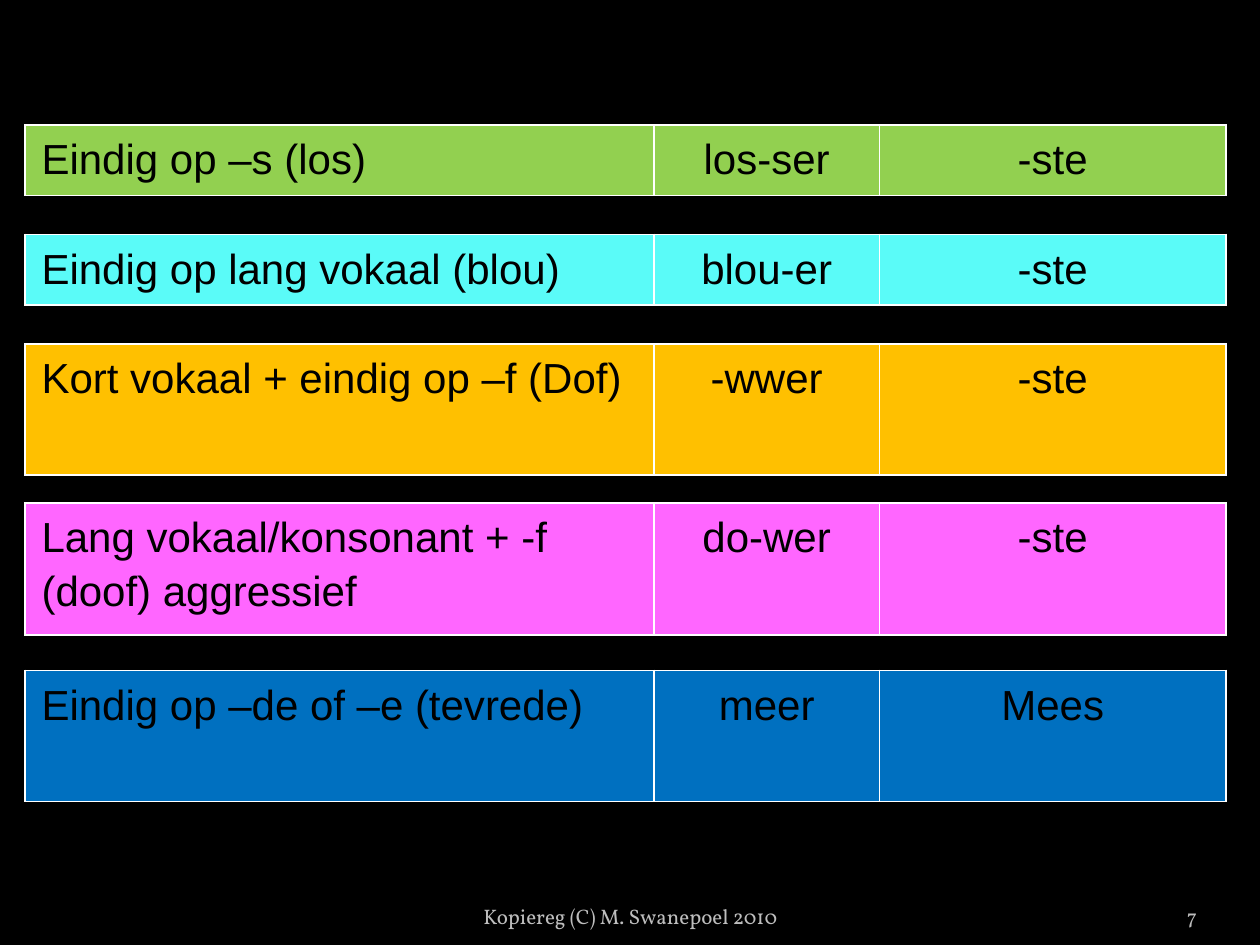
"""Build a slide of Afrikaans degrees-of-comparison spelling rules."""
from dataclasses import dataclass

from lxml.etree import fromstring
from pptx import Presentation
from pptx.dml.color import RGBColor
from pptx.enum.text import MSO_ANCHOR as ANCHOR, PP_ALIGN as ALIGN
from pptx.oxml.ns import nsdecls
from pptx.slide import Slide
from pptx.table import _Cell as Cell
from pptx.util import Inches, Pt

BLACK = RGBColor(0x00, 0x00, 0x00)
GREY = RGBColor(0xBD, 0xBD, 0xBD)
GREEN = RGBColor(0x92, 0xD0, 0x50)
CYAN = RGBColor(0x5A, 0xFB, 0xF8)
AMBER = RGBColor(0xFF, 0xC0, 0x00)
PINK = RGBColor(0xFF, 0x66, 0xFF)
BLUE = RGBColor(0x00, 0x70, 0xC0)

LEFT = 0.2
COL_WIDTHS = (4.99, 1.79, 2.75)
CELL_FORMAT = {
    "margin_left": Inches(0.13),
    "margin_right": Inches(0.13),
    "margin_top": Inches(0.04),
    "margin_bottom": Inches(0.04),
}
RULE_FONT = {"name": "Arial", "size": Pt(24)}
FOOTER_FONT = {"name": "Vollkorn", "size": Pt(12)}


@dataclass(frozen=True)
class Rule:
    top: float
    height: float
    fill: RGBColor
    texts: tuple[str, str, str]


@dataclass(frozen=True)
class Footer:
    left: float
    width: float
    text: str
    align: ALIGN
    side_inset: float


RULES = (
    Rule(0.99, 0.56, GREEN, ("Eindig op –s (los)", "los-ser", "-ste")),
    Rule(1.86, 0.56, CYAN, ("Eindig op lang vokaal (blou)", "blou-er", "-ste")),
    Rule(2.73, 1.04, AMBER, ("Kort vokaal + eindig op –f (Dof)", "-wwer", "-ste")),
    Rule(3.99, 1.05, PINK,
         ("Lang vokaal/konsonant + -f (doof) aggressief", "do-wer", "-ste")),
    Rule(5.32, 1.04, BLUE, ("Eindig op –de of –e (tevrede)", "meer", "Mees")),
)
FOOTERS = (
    Footer(3.42, 3.17, "Kopiereg (C) M. Swanepoel 2010", ALIGN.CENTER, 0.1),
    Footer(8.67, 0.83, "7", ALIGN.RIGHT, 0),
)


def apply_format(target: object, values: dict) -> None:
    """Set each named attribute on the target."""
    for name, value in values.items():
        setattr(target, name, value)


def write_text(tf, text: str, align: ALIGN, font: dict, color: RGBColor):
    """Write one formatted paragraph and return it."""
    p = tf.paragraphs[0]
    p.alignment = align
    r = p.add_run()
    r.text = text
    apply_format(r.font, font)
    r.font.color.rgb = color
    return p


def add_borders(cell: Cell) -> None:
    """Give all four cell edges a thin white line."""
    tc_pr = cell._tc.get_or_add_tcPr()
    for i, side in enumerate(("lnL", "lnR", "lnT", "lnB")):
        tc_pr.insert(i, fromstring(
            f'<a:{side} {nsdecls("a")} w="{Pt(1)}"><a:solidFill>'
            f'<a:srgbClr val="FFFFFF"/></a:solidFill></a:{side}>'))


def add_rule(s: Slide, rule: Rule) -> None:
    """Draw one spelling rule as a single-row table."""
    table = s.shapes.add_table(
        1, len(COL_WIDTHS), Inches(LEFT), Inches(rule.top),
        Inches(sum(COL_WIDTHS)), Inches(rule.height)).table
    apply_format(table, {"first_row": False, "horz_banding": False})
    for i, (width, text) in enumerate(zip(COL_WIDTHS, rule.texts)):
        table.columns[i].width = Inches(width)
        cell = table.cell(0, i)
        apply_format(cell, CELL_FORMAT)
        cell.fill.solid()
        cell.fill.fore_color.rgb = rule.fill
        add_borders(cell)
        align = ALIGN.CENTER if i else ALIGN.LEFT
        p = write_text(cell.text_frame, text, align, RULE_FONT, BLACK)
        p.line_spacing = 1.15


def add_footer(s: Slide, footer: Footer) -> None:
    """Draw one bottom-anchored footer text."""
    sp = s.shapes.add_textbox(
        Inches(footer.left), Inches(7.02), Inches(footer.width), Inches(0.4))
    tf = sp.text_frame
    apply_format(tf, {
        "word_wrap": True,
        "vertical_anchor": ANCHOR.BOTTOM,
        "margin_left": Inches(footer.side_inset),
        "margin_right": Inches(footer.side_inset),
    })
    write_text(tf, footer.text, footer.align, FOOTER_FONT, GREY)


def main() -> None:
    """Build and save the slide."""
    prs = Presentation()
    apply_format(prs, {"slide_width": Inches(10), "slide_height": Inches(7.5)})
    s = prs.slides.add_slide(prs.slide_layouts[6])
    s.background.fill.solid()
    s.background.fill.fore_color.rgb = BLACK
    for rule in RULES:
        add_rule(s, rule)
    for footer in FOOTERS:
        add_footer(s, footer)
    prs.save("out.pptx")


if __name__ == "__main__":
    main()
